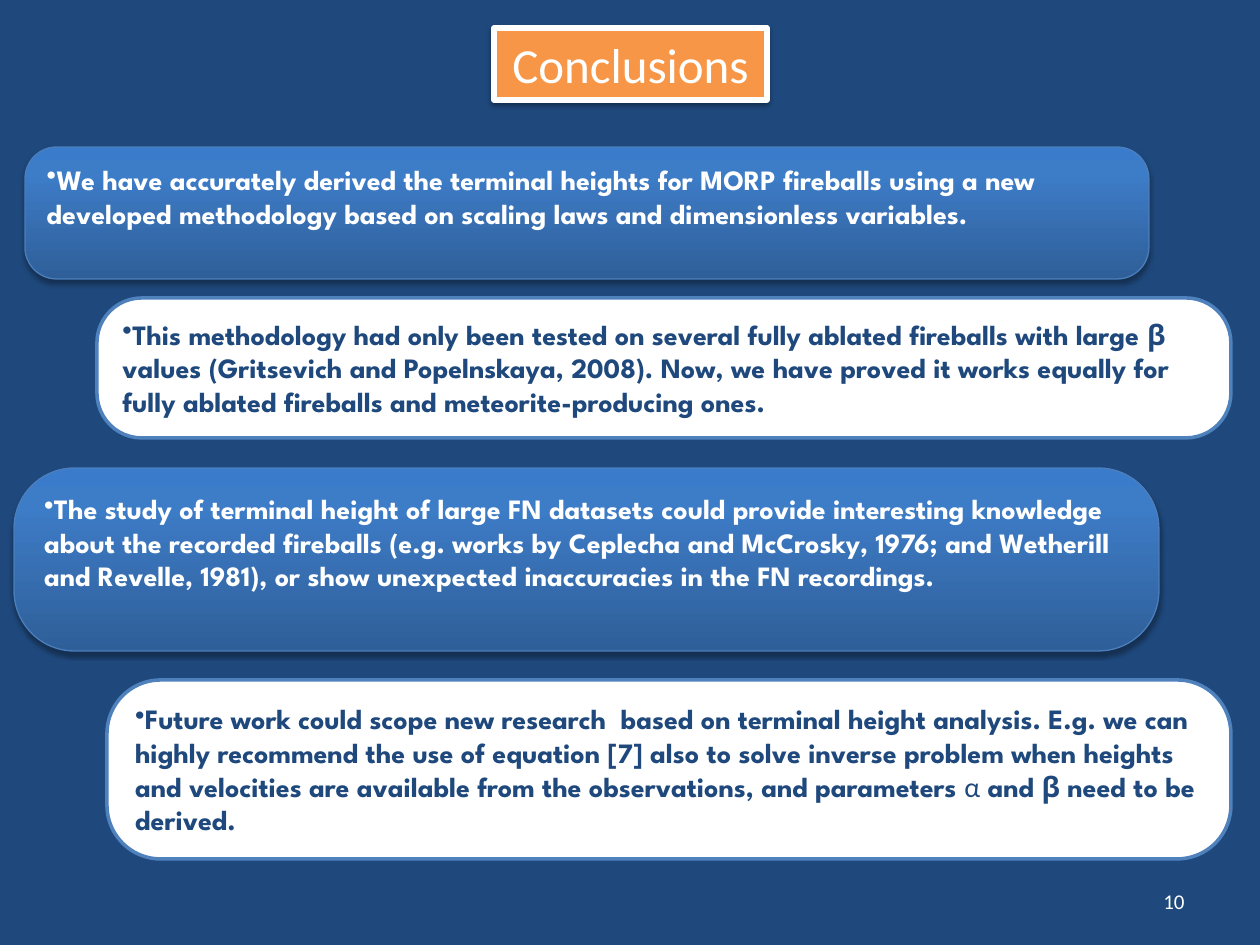
from copy import deepcopy
from lxml.etree import SubElement
from pptx import Presentation
from pptx.dml.color import RGBColor
from pptx.enum.shapes import MSO_SHAPE
from pptx.enum.text import MSO_ANCHOR, PP_ALIGN
from pptx.oxml.ns import qn
from pptx.util import Pt

PX = 914400 // 126
HUES = {
    "navy": "1F497D", "white": "FFFFFF", "orange": "F79646",
    "rim": "4F81BD", "edge": "4B7EBC", "black": "000000",
    "low": "2F5F99", "mid": "3D7CC7", "top": "3A7CCB",
}
RAMP = [(0, "low"), (0.8, "mid"), (1, "top")]
BODY = {"name": "League Spartan", "size": Pt(16), "bold": True}
HEAD = {"name": "Calibri", "size": Pt(28)}
NOTE = {"name": "Calibri", "size": Pt(12)}
GREEK = BODY | {"name": "Calibri", "bold": False}


def hue(name):
    return RGBColor.from_string(HUES[name])


class Deck:
    def __init__(self, wide, high):
        self.show = Presentation()
        self.show.slide_width, self.show.slide_height = wide * PX, high * PX
        self.slide = self.show.slides.add_slide(self.show.slide_layouts[6])
        back = self.slide.background.fill
        back.solid()
        back.fore_color.rgb = hue("navy")

    def shape(self, kind, at, fill, line, width):
        item = self.slide.shapes.add_shape(kind, *[n * PX for n in at])
        item.shadow.inherit = False
        if fill == "ramp":
            self.ramp(item)
        else:
            item.fill.solid()
            item.fill.fore_color.rgb = hue(fill)
        item.line.color.rgb = hue(line)
        item.line.width = Pt(width)
        return item

    def ramp(self, item):
        item.fill.gradient()
        item.fill.gradient_angle = 90
        stops = item._element.spPr.find(".//" + qn("a:gsLst"))
        stops.append(deepcopy(stops[-1]))
        for stop, (place, name) in zip(item.fill.gradient_stops, RAMP):
            stop.position = place
            stop.color.rgb = hue(name)

    def shade(self, item, far, alpha):
        glow = item._element.spPr.find(qn("a:effectLst"))
        cast = SubElement(glow, qn("a:outerShdw"), blurRad=str(Pt(3.1)),
                          dist=str(Pt(far)), dir="5400000", rotWithShape="0")
        tint = SubElement(cast, qn("a:srgbClr"), val=HUES["black"])
        SubElement(tint, qn("a:alpha"), val=str(alpha * 1000))

    def text(self, item, runs, color, align, anchor, wrap=True, bullet=False):
        frame = item.text_frame
        frame.word_wrap = wrap
        frame.vertical_anchor = anchor
        para = frame.paragraphs[0]
        para.alignment = align
        if bullet:
            para.level = 2
            props = para._p.get_or_add_pPr()
            props.set("marL", "0")
            props.set("indent", "0")
            SubElement(props, qn("a:buChar"), char="•")
        for words, style in runs:
            run = para.add_run()
            run.text = words
            for key, value in style.items():
                setattr(run.font, key, value)
            run.font.color.rgb = hue(color)

    def title(self, at, words):
        item = self.shape(MSO_SHAPE.RECTANGLE, at, "orange", "white", 3)
        self.shade(item, 1.6, 38)
        self.text(item, [(words, HEAD)], "white", PP_ALIGN.CENTER,
                  MSO_ANCHOR.TOP, wrap=False)

    def card(self, at, bend, dark, runs):
        look = ("ramp", "edge", 0.75) if dark else ("white", "rim", 2)
        item = self.shape(MSO_SHAPE.ROUNDED_RECTANGLE, at, *look)
        item.adjustments[0] = bend
        if dark:
            self.shade(item, 1.8, 35)
        self.text(item, runs, "white" if dark else "navy", PP_ALIGN.LEFT,
                  MSO_ANCHOR.TOP, bullet=True)

    def note(self, at, words):
        item = self.slide.shapes.add_textbox(*[n * PX for n in at])
        self.text(item, [(words, NOTE)], "white", PP_ALIGN.RIGHT,
                  MSO_ANCHOR.MIDDLE)


# Card place, corner, dark look and text
CARDS = [
    ((25, 147, 1124, 132), 0.24, True, [
        ("We have accurately derived the terminal heights for MORP fireballs "
         "using a new developed methodology based on scaling laws and "
         "dimensionless variables.", BODY)]),
    ((97, 298, 1134, 140), 0.32, False, [
        ("This methodology had only been tested on several fully ablated "
         "fireballs with large β values (Gritsevich and Popelnskaya, 2008). "
         "Now, we have proved it works equally for fully ablated fireballs "
         "and meteorite-producing ones.", BODY)]),
    ((14, 468, 1145, 183), 0.33, True, [
        ("The study of terminal height of large FN datasets could provide "
         "interesting knowledge about the recorded fireballs (e.g. works by "
         "Ceplecha and McCrosky, 1976; and Wetherill and Revelle, 1981), or "
         "show unexpected inaccuracies in the FN recordings.", BODY)]),
    ((107, 680, 1124, 179), 0.3, False, [
        ("Future work could scope new research  based on terminal height "
         "analysis. E.g. we can highly recommend the use of equation [7] also "
         "to solve inverse problem when heights and velocities are available "
         "from the observations, and parameters ", BODY),
        ("α", GREEK),
        (" and β need to be derived.", BODY)]),
]


def main():
    deck = Deck(1260, 945)
    # Heading
    deck.title((494, 28, 273, 72), "Conclusions")
    # Conclusions
    for card in CARDS:
        deck.card(*card)
    # Page number
    deck.note((903, 876, 294, 50), "10")
    deck.show.save("out.pptx")


if __name__ == "__main__":
    main()
